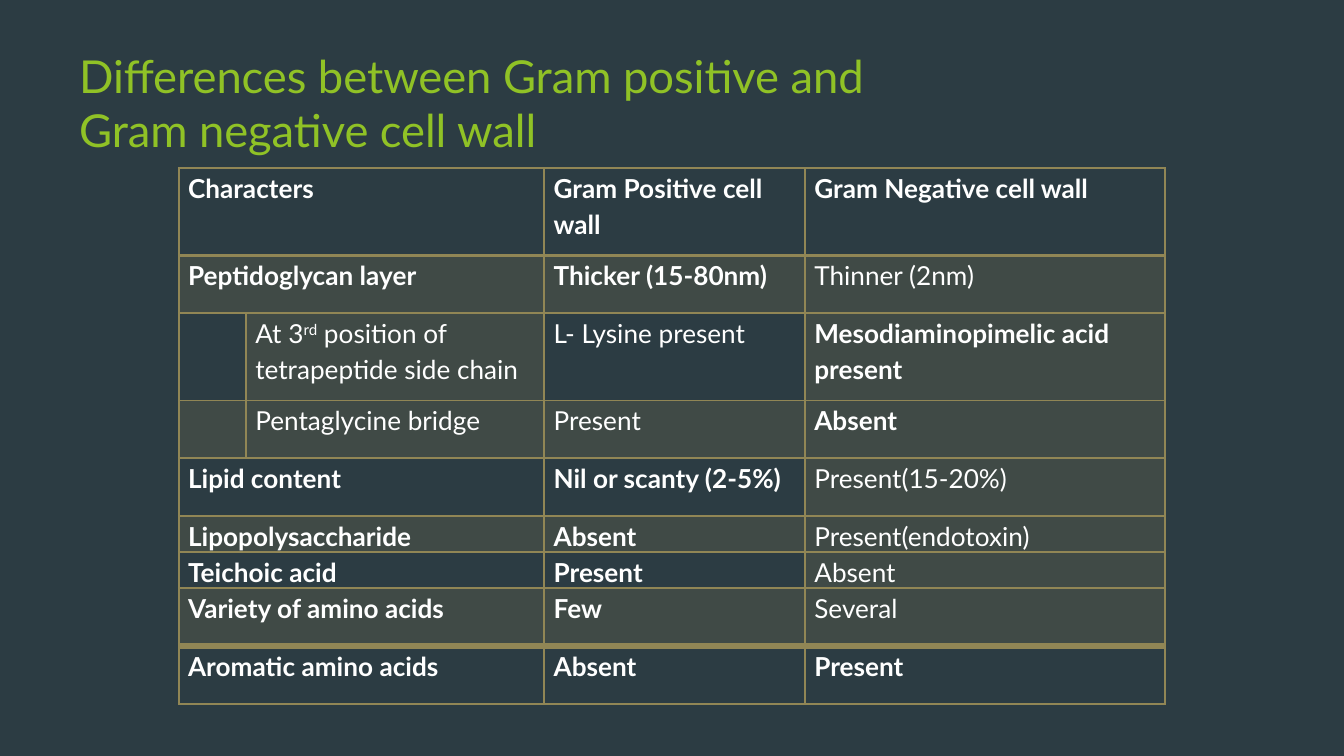
from dataclasses import dataclass

from lxml import etree
from pptx import Presentation
from pptx import util as u
from pptx.dml.color import RGBColor
from pptx.enum import text as t
from pptx.oxml.ns import qn

SLATE = RGBColor(0x2C, 0x3C, 0x43)
GREEN = RGBColor(0x90, 0xC2, 0x26)
GOLD = RGBColor(0x91, 0x86, 0x55)
WHITE = RGBColor(0xFF, 0xFF, 0xFF)
FACE = "Lato"
WIDTHS = (0.5, 2.22, 1.94, 2.68)


@dataclass
class Entry:
    words: str = ""
    bold: bool = False
    tint: bool = False
    just: bool = False
    raised: str = ""
    tail: str = ""


@dataclass
class Line:
    high: float
    cells: tuple[Entry, ...]
    top: int = 1
    base: int = 1


def trait(high: float, name: str, plus: str, minus: str, tint: bool) -> Line:
    return Line(high, (Entry(name, True, tint), Entry(plus, True, tint),
                       Entry(minus, tint=True, just=True)))


LINES = (
    Line(0.65, (Entry("Characters", True), Entry("Gram Positive cell wall", True),
                Entry("Gram Negative cell wall", True)), base=2),
    trait(0.43, "Peptidoglycan layer", "Thicker (15-80nm)", "Thinner (2nm)", True),
    Line(0.65, (Entry(),
                Entry("At 3", tint=True, raised="rd",
                      tail=" position of tetrapeptide side chain"),
                Entry("L- Lysine present"),
                Entry("Mesodiaminopimelic acid present", True, True))),
    Line(0.43, (Entry(tint=True), Entry("Pentaglycine bridge", tint=True),
                Entry("Present", tint=True), Entry("Absent", True, True))),
    trait(0.43, "Lipid content", "Nil or scanty (2-5%)", "Present(15-20%)", False),
    trait(0.21, "Lipopolysaccharide", "Absent", "Present(endotoxin)", True),
    trait(0.21, "Teichoic acid", "Present", "Absent", False),
    trait(0.43, "Variety of amino acids", "Few", "Several", True),
    Line(0.43, (Entry("Aromatic amino acids", True), Entry("Absent", True),
                Entry("Present", True, just=True)), top=4),
)


def style(run, size: float, color: RGBColor, bold: bool = False) -> None:
    font = run.font
    font.name, font.size, font.bold = FACE, u.Pt(size), bold
    font.color.rgb = color


def edge(cell, side: str, wide: int) -> None:
    props = cell._tc.get_or_add_tcPr()
    line = etree.SubElement(props, qn("a:ln" + side), w=str(u.Pt(wide)))
    fill = etree.SubElement(line, qn("a:solidFill"))
    etree.SubElement(fill, qn("a:srgbClr"), val=str(GOLD))


def frame(cell, top: int, base: int) -> None:
    for side, wide in (("L", 1), ("R", 1), ("T", top), ("B", base)):
        edge(cell, side, wide)
    cell.margin_left = cell.margin_right = u.Inches(0.07)
    cell.margin_top = cell.margin_bottom = 0


def paint(cell, tint: bool) -> None:
    if not tint:
        cell.fill.background()
        return
    cell.fill.solid()
    cell.fill.fore_color.rgb = GOLD
    color = cell._tc.tcPr.find(qn("a:solidFill"))[0]
    etree.SubElement(color, qn("a:alpha"), val="20000")


def write(cell, entry: Entry) -> None:
    para = cell.text_frame.paragraphs[0]
    para.line_spacing = 1.15
    if entry.just:
        para.alignment = t.PP_ALIGN.JUSTIFY
    for part in filter(None, (entry.words, entry.raised, entry.tail)):
        run = para.add_run()
        run.text = part
        style(run, 14, WHITE, entry.bold)
        if part == entry.raised:
            run.font._element.set("baseline", "30000")
    if not entry.words:
        para._p.get_or_add_endParaRPr().set("sz", "1400")


def title(slide) -> None:
    box = slide.shapes.add_textbox(u.Inches(0.49), u.Inches(0.31),
                                   u.Inches(9.19), u.Inches(0.67))
    body = box.text_frame
    body.word_wrap = True
    body.text = "Differences between Gram positive and \vGram negative cell wall"
    for run in body.paragraphs[0].runs:
        style(run, 24.3, GREEN)


def grid(slide) -> None:
    shape = slide.shapes.add_table(
        len(LINES), len(WIDTHS), u.Inches(1.33), u.Inches(1.25),
        u.Inches(sum(WIDTHS)), u.Inches(sum(line.high for line in LINES)))
    table = shape.table
    table.first_row = table.horz_banding = False
    for col, wide in zip(table.columns, WIDTHS):
        col.width = u.Inches(wide)
    for index, line in enumerate(LINES):
        row = table.rows[index]
        row.height = u.Inches(line.high)
        cells = list(row.cells)
        entries = list(line.cells)
        if len(entries) < len(cells):
            cells[0].merge(cells[1])
            entries.insert(1, Entry(tint=entries[0].tint))
        for cell, entry in zip(cells, entries):
            frame(cell, line.top, line.base)
            paint(cell, entry.tint)
            write(cell, entry)


def main() -> None:
    deck = Presentation()
    deck.slide_width = u.Inches(10)
    deck.slide_height = deck.slide_width * 9 // 16
    slide = deck.slides.add_slide(deck.slide_layouts[6])
    slide.background.fill.solid()
    slide.background.fill.fore_color.rgb = SLATE
    title(slide)
    grid(slide)
    deck.save("out.pptx")


if __name__ == "__main__":
    main()
